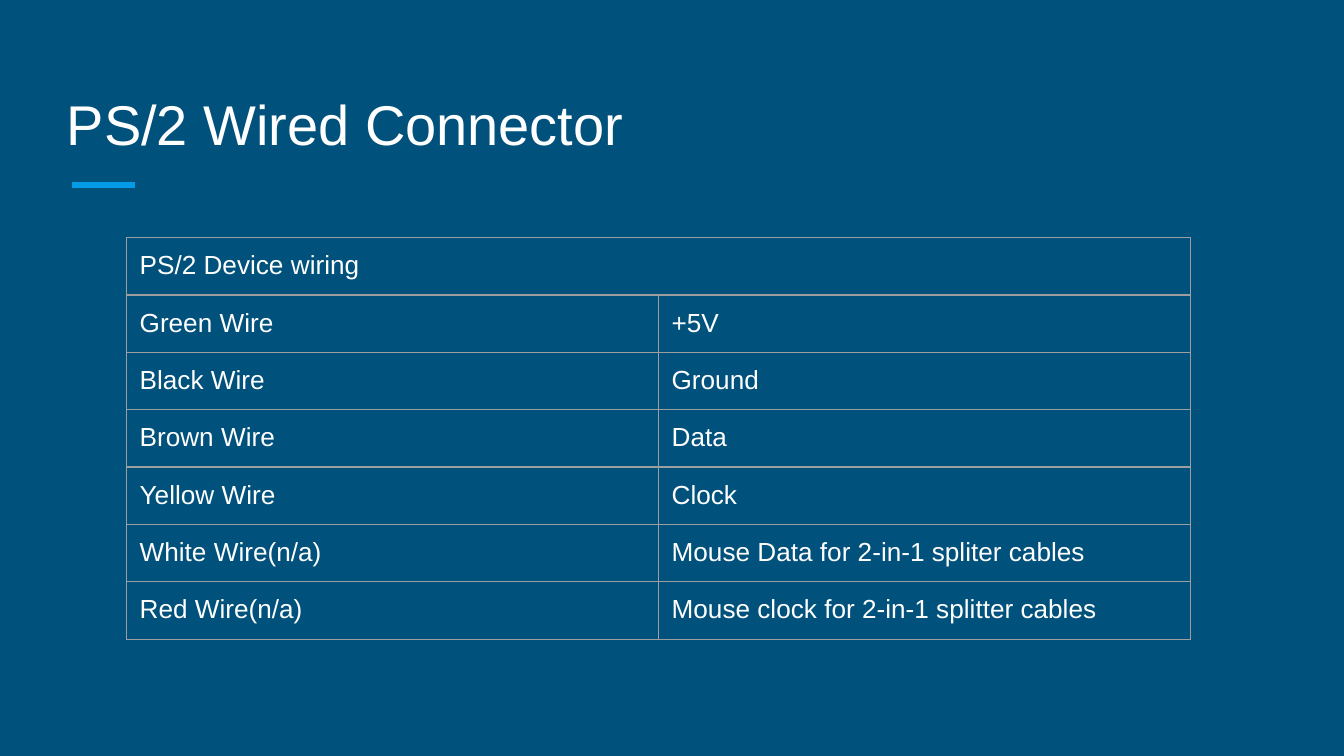
import dataclasses

import pptx
import pptx.dml.color
import pptx.enum.shapes
import pptx.enum.text
import pptx.oxml.ns
import pptx.util
from lxml import etree

Pt = pptx.util.Pt
qn = pptx.oxml.ns.qn

WIRING = [
    ("PS/2 Device wiring", ""),
    ("Green Wire", "+5V"),
    ("Black Wire", "Ground"),
    ("Brown Wire", "Data"),
    ("Yellow Wire", "Clock"),
    ("White Wire(n/a)", "Mouse Data for 2-in-1 spliter cables"),
    ("Red Wire(n/a)", "Mouse clock for 2-in-1 splitter cables"),
]


@dataclasses.dataclass(frozen=True)
class Theme:
    background: str = "00517C"
    accent: str = "039BE5"
    border: str = "9E9E9E"
    text: str = "FFFFFF"
    font: str = "Arial"
    title_size: float = 30
    body_size: float = 14
    inset: float = 7.2
    border_width: float = 0.75


def rgb(value):
    return pptx.dml.color.RGBColor.from_string(value)


def write_text(frame, text, *, size, color, font):
    span = frame.paragraphs[0].add_run()
    span.text = text
    span.font.size = Pt(size)
    span.font.name = font
    span.font.color.rgb = rgb(color)


class PageBuilder:
    def __init__(self, page, theme):
        self.page = page
        self.theme = theme
        fill = page.background.fill
        fill.solid()
        fill.fore_color.rgb = rgb(theme.background)

    def title(self, text, left, top, width, height):
        box = self.page.shapes.add_textbox(Pt(left), Pt(top), Pt(width), Pt(height))
        frame = box.text_frame
        frame.word_wrap = True
        frame.vertical_anchor = pptx.enum.text.MSO_ANCHOR.TOP
        frame.margin_left = frame.margin_right = Pt(self.theme.inset)
        frame.margin_top = frame.margin_bottom = Pt(self.theme.inset)
        write_text(frame, text, size=self.theme.title_size,
                   color=self.theme.text, font=self.theme.font)

    def rule(self, left, top, width, thickness):
        line = self.page.shapes.add_connector(
            pptx.enum.shapes.MSO_CONNECTOR.STRAIGHT,
            Pt(left), Pt(top), Pt(left + width), Pt(top))
        line.line.color.rgb = rgb(self.theme.accent)
        line.line.width = Pt(thickness)
        etree.SubElement(line._element.spPr, qn("a:effectLst"))

    def table(self, rows, left, top, column_width, row_height):
        """Draw a bordered grid; the first row spans all columns."""
        columns = len(rows[0])
        table = self.page.shapes.add_table(
            len(rows), columns, Pt(left), Pt(top),
            Pt(column_width * columns), Pt(row_height * len(rows))).table
        table.first_row = table.horz_banding = False
        for column in table.columns:
            column.width = Pt(column_width)
        for row in table.rows:
            row.height = Pt(row_height)
        for row_index, row in enumerate(rows):
            for column_index, text in enumerate(row):
                self.cell(table.cell(row_index, column_index), text)
        table.cell(0, 0).merge(table.cell(0, columns - 1))

    def cell(self, cell, text):
        cell.margin_left = cell.margin_right = Pt(self.theme.inset)
        cell.margin_top = cell.margin_bottom = Pt(self.theme.inset)
        self.borders(cell)
        cell.fill.background()
        if text:
            write_text(cell.text_frame, text, size=self.theme.body_size,
                       color=self.theme.text, font=self.theme.font)

    def borders(self, cell):
        properties = cell._tc.get_or_add_tcPr()
        for side in ("lnL", "lnR", "lnT", "lnB"):
            edge = etree.SubElement(properties, qn(f"a:{side}"),
                                    w=str(Pt(self.theme.border_width)))
            fill = etree.SubElement(edge, qn("a:solidFill"))
            etree.SubElement(fill, qn("a:srgbClr"), val=self.theme.border)


def main():
    deck = pptx.Presentation()
    deck.slide_width, deck.slide_height = Pt(720), Pt(405)
    builder = PageBuilder(deck.slides.add_slide(deck.slide_layouts[6]), Theme())
    builder.rule(38.6, 99.1, 33.6, 3)
    builder.table(WIRING, 67.6, 127.3, column_width=285, row_height=30.75)
    builder.title("PS/2 Wired Connector", 28.7, 41, 360, 77.8)
    deck.save("out.pptx")


if __name__ == "__main__":
    main()
